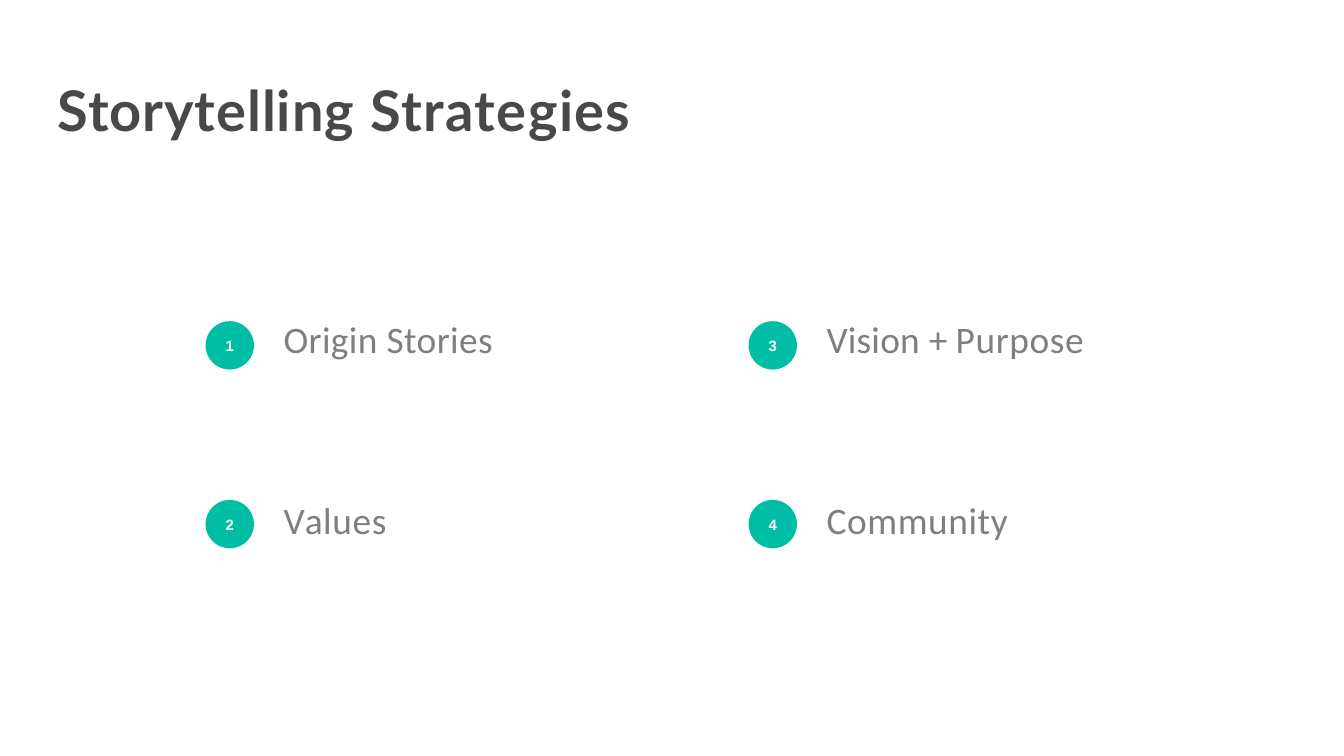
from pptx import Presentation
from pptx.dml.color import RGBColor
from pptx.enum.shapes import MSO_SHAPE as SHAPE
from pptx.enum.text import MSO_ANCHOR as ANCHOR, MSO_AUTO_SIZE as AUTO, PP_ALIGN as ALIGN
from pptx.util import Inches, Pt

DARK = RGBColor(0x48, 0x48, 0x48)
GRAY = RGBColor(0x7F, 0x7F, 0x7F)
TEAL = RGBColor(0x00, 0xBE, 0xA5)
WHITE = RGBColor(0xFF, 0xFF, 0xFF)

TITLE = [("Storytelling ", 0.5), ("Strategies", 0.8)]
STRATEGIES = [
    ([("Origin Stories", 0.2)], 1.59),
    ([("V", -1.5), ("alues", 0.3)], 0.78),
    ([("Vision ", 0.1), ("+ ", -0.1), ("Purpose", 0.3)], 1.94),
    ([("Community", 0.3)], 1.39),
]
ROWS = 2
LEFT, COL_STEP = 1.53, 4.04
BADGE_TOP, BADGE_STEP, BADGE_SIZE = 2.39, 1.33, 0.36
LABEL_TOP, LABEL_STEP, LABEL_OFFSET = 2.34, 1.35, 0.57


def write(sp, runs, size, font, color, bold=False, align=ALIGN.LEFT,
          anchor=ANCHOR.TOP, fit=AUTO.SHAPE_TO_FIT_TEXT, top=0.01, indent=0.01,
          before=1, wrap=True):
    tf = sp.text_frame
    tf.margin_left = tf.margin_right = tf.margin_bottom = 0
    tf.margin_top = Inches(top)
    tf.word_wrap = wrap
    tf.auto_size = fit
    tf.vertical_anchor = anchor
    p = tf.paragraphs[0]
    p.alignment = align
    p.space_before = Pt(before)
    pPr = p._p.get_or_add_pPr()
    pPr.set("marL", str(Inches(indent)))
    pPr.set("indent", "0")
    for text, spacing in runs:
        r = p.add_run()
        r.text = text
        r.font.size = Pt(size)
        r.font.name = font
        r.font.bold = bold
        r.font.color.rgb = color
        if spacing:
            r.font._element.set("spc", str(round(spacing * 100)))


prs = Presentation()
prs.slide_width = Inches(10)
prs.slide_height = prs.slide_width * 9 // 16
s = prs.slides.add_slide(prs.slide_layouts[5])

title = s.shapes.title
title.left, title.top = Inches(0.42), Inches(0.55)
title.width, title.height = Inches(4.51), Inches(0.53)
write(title, TITLE, 30, "Lato", DARK, bold=True)

for i, (label, width) in enumerate(STRATEGIES):
    col, row = divmod(i, ROWS)
    x = LEFT + col * COL_STEP

    badge = s.shapes.add_shape(
        SHAPE.OVAL, Inches(x), Inches(BADGE_TOP + row * BADGE_STEP),
        Inches(BADGE_SIZE), Inches(BADGE_SIZE))
    badge.shadow.inherit = False
    badge.fill.solid()
    badge.fill.fore_color.rgb = TEAL
    badge.line.fill.background()
    write(badge, [(str(i + 1), 0)], 8, "Arial", WHITE, bold=True,
          align=ALIGN.CENTER, anchor=ANCHOR.MIDDLE, fit=AUTO.NONE,
          top=0, indent=0, before=0, wrap=False)

    box = s.shapes.add_textbox(
        Inches(x + LABEL_OFFSET), Inches(LABEL_TOP + row * LABEL_STEP),
        Inches(width), Inches(0.36))
    write(box, label, 20, "Calibri", GRAY)

prs.save("out.pptx")
